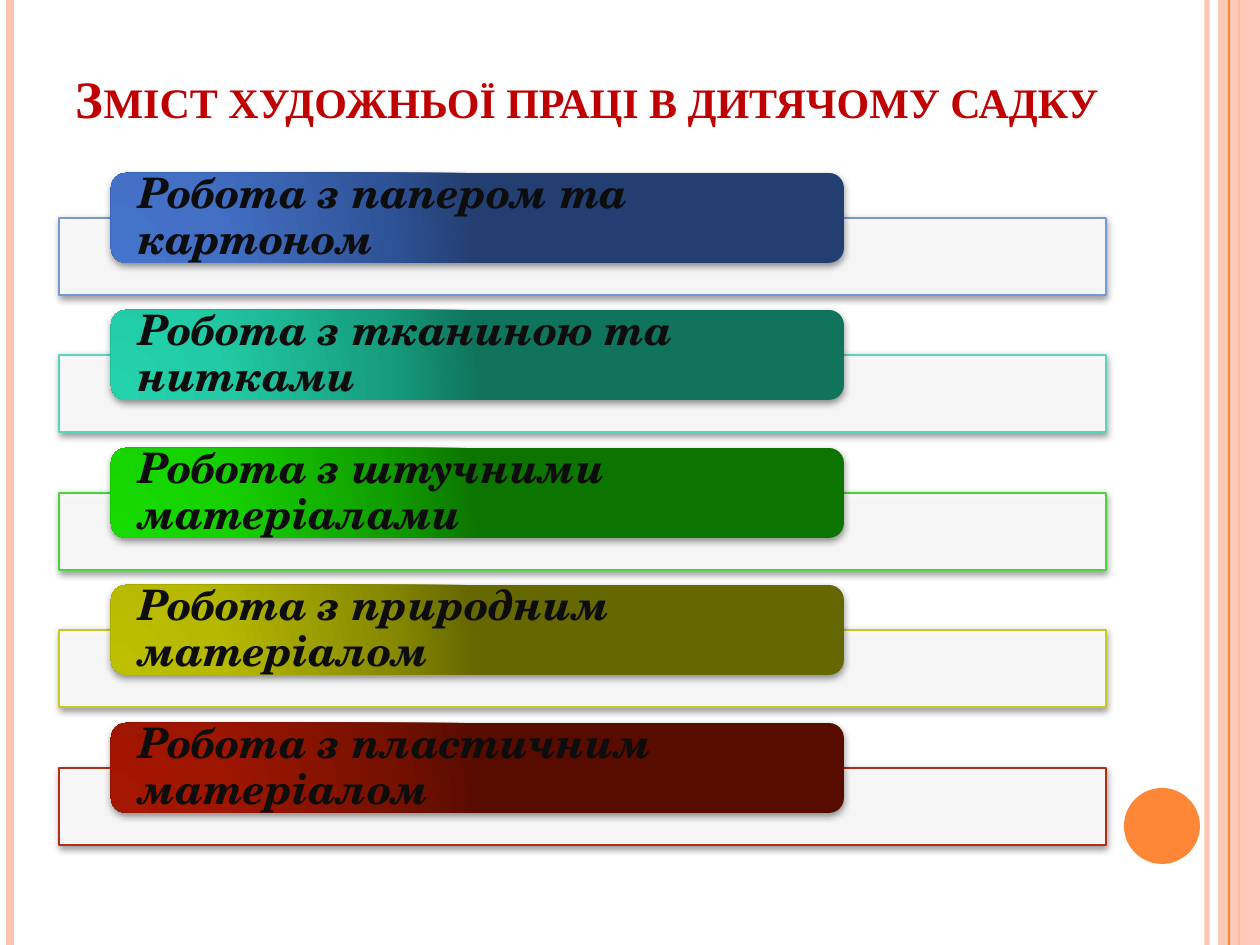
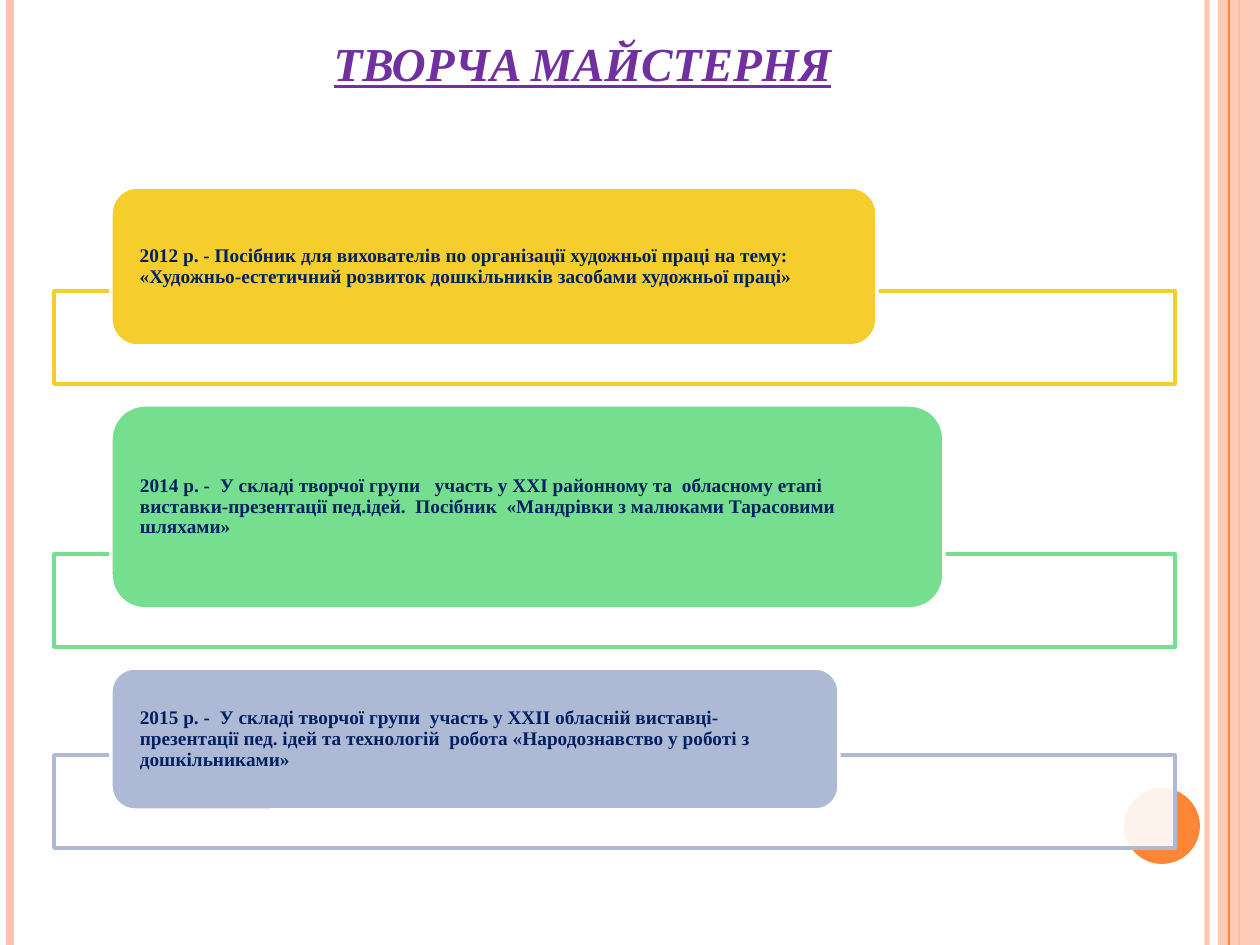
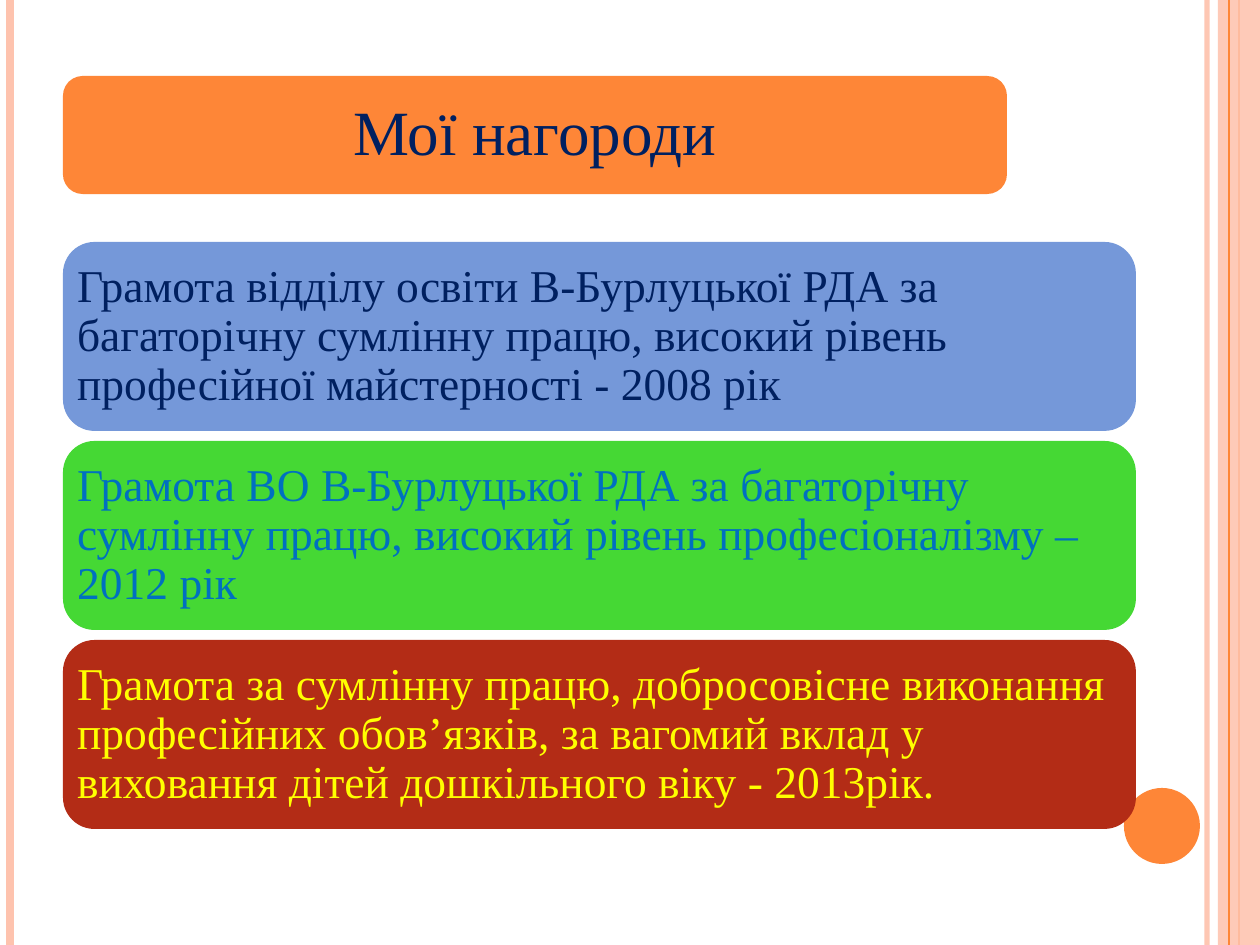
import lxml.etree
import pptx
import pptx.dml.color
import pptx.enum.shapes
import pptx.enum.text
import pptx.oxml
import pptx.oxml.ns
import pptx.util

PX = 914400 / 126  # EMU per px
FONT = "Times New Roman"
ORANGE, PEACH, WHITE, NAVY = "FE8637", "FEC3AE", "FFFFFF", "002060"
rgb = pptx.dml.color.RGBColor.from_string
qn = pptx.oxml.ns.qn
SHAPE = pptx.enum.shapes.MSO_SHAPE
ANCHOR = pptx.enum.text.MSO_ANCHOR
ALIGN = pptx.enum.text.PP_ALIGN


def add_box(slide, kind, box, fill, line=None, width=0, alpha=100):
    """Add a preset shape; box is left, top, width, height in px."""
    sp = slide.shapes.add_shape(kind, *[round(v * PX) for v in box])
    sp.shadow.inherit = False
    sp.fill.solid()
    sp.fill.fore_color.rgb = rgb(fill)
    if alpha < 100:
        clr = sp.element.spPr.find(qn("a:solidFill"))[0]
        lxml.etree.SubElement(clr, qn("a:alpha"), val=str(alpha * 1000))
    if line:
        sp.line.color.rgb = rgb(line)
        sp.line.width = pptx.util.Pt(width)
    else:
        sp.line.fill.background()
    return sp


def write(sp, text, size, color, inset=(13, 6), font=FONT, bold=False,
          italic=False, align=ALIGN.LEFT, anchor=ANCHOR.MIDDLE, spacing=0.9):
    """Set the text of a shape; inset is the side and top margin in px."""
    tf = sp.text_frame
    tf.word_wrap = True
    tf.vertical_anchor = anchor
    tf.margin_left = tf.margin_right = round(inset[0] * PX)
    tf.margin_top = tf.margin_bottom = round(inset[1] * PX)
    p = tf.paragraphs[0]
    p.text = text
    p.alignment = align
    p.line_spacing = spacing
    r = p.runs[0]
    r.font.name = font
    r.font.size = pptx.util.Pt(size)
    r.font.color.rgb = rgb(color)
    r.font.bold = bold
    r.font.italic = italic
    return r


prs = pptx.Presentation()
prs.slide_width = round(1260 * PX)
prs.slide_height = round(945 * PX)
blank = prs.slide_layouts[6]
work, workshop, awards = [prs.slides.add_slide(blank) for _ in range(3)]

# Shared side stripes and disc, drawn once and moved to the layout
decor = []
for x, color, width, alpha in [(1207, PEACH, 3, 93), (10, PEACH, 4.5, 100),
                               (1239, ORANGE, 1.5, 100), (None, PEACH, 0, 87),
                               (1229, ORANGE, 0.75, 100)]:
    if x is None:
        band = add_box(work, SHAPE.RECTANGLE, (1218, 0, 42, 945), color, alpha=alpha)
        decor.append(band)
        continue
    cx = work.shapes.add_connector(pptx.enum.shapes.MSO_CONNECTOR.STRAIGHT,
                                   round(x * PX), 0, round(x * PX), prs.slide_height)
    cx.line.color.rgb = rgb(color)
    cx.line.width = pptx.util.Pt(width)
    if alpha < 100:
        clr = cx.element.spPr.find(qn("a:ln")).find(qn("a:solidFill"))[0]
        lxml.etree.SubElement(clr, qn("a:alpha"), val=str(alpha * 1000))
    lxml.etree.SubElement(cx.element.spPr, qn("a:effectLst"))
    decor.append(cx)
decor.append(add_box(work, SHAPE.OVAL, (1124, 788, 76, 76), ORANGE))
for sp in decor:
    blank.shapes.element.append(sp.element)

# Titles of the first two slides
for slide, box, text, size, color, align in [
        (work, (63, 38, 1133, 97), "Зміст художньої праці в дитячому садку",
         30, "C00000", ALIGN.LEFT),
        (workshop, (123, 37, 919, 60), "ТВОРЧА МАЙСТЕРНЯ", 27, "7030A0", ALIGN.CENTER)]:
    sp = slide.shapes.add_textbox(*[round(v * PX) for v in box])
    r = write(sp, text, size, color, bold=True, italic=slide is workshop,
              align=align, anchor=ANCHOR.BOTTOM, spacing=1.0)
    r.font.underline = slide is workshop
    r.font._element.set("cap", "small")

# Slide 1: kinds of work, a gradient label over a shadowed bar
SHADOW = pptx.oxml.parse_xml
NS = 'xmlns:a="http://schemas.openxmlformats.org/drawingml/2006/main"'
shadow_xml = (f'<a:outerShdw {NS} blurRad="50800" dist="20320" dir="5400000" '
              'rotWithShape="0"><a:srgbClr val="000000"><a:alpha val="42000"/>'
              '</a:srgbClr></a:outerShdw>')
kinds = [
    ("папером та картоном", "7598D9", ("4574CC", "4370C5", "2F5397", "233E70")),
    ("тканиною та нитками", "55D7BA", ("23D3AB", "22CBA5", "169D7E", "10745D")),
    ("штучними матеріалами", "45D834", ("17DB00", "16D300", "119E00", "0C7500")),
    ("природним матеріалом", "C7CA20", ("BCC000", "B6B900", "888B00", "656700")),
    ("пластичним матеріалом", "B32C16", ("A41700", "9F1600", "771100", "580C00")),
]
for i, (material, line, shades) in enumerate(kinds):
    top = 173 + i * 275 // 2
    bar = add_box(work, SHAPE.RECTANGLE, (59, top + 45, 1047, 77), WHITE, line, 1, 90)
    label = add_box(work, SHAPE.ROUNDED_RECTANGLE, (111, top, 733, 90), shades[0])
    stops = "".join(f'<a:gs pos="{pos}000"><a:srgbClr val="{c}"/></a:gs>'
                    for pos, c in zip((0, 30, 75, 100), shades))
    grad = pptx.oxml.parse_xml(
        f'<a:gradFill {NS} rotWithShape="1"><a:gsLst>{stops}</a:gsLst><a:path path="circle">'
        '<a:fillToRect l="5000" t="100000" r="120000" b="10000"/></a:path></a:gradFill>')
    spPr = label.element.spPr
    spPr.replace(spPr.find(qn("a:solidFill")), grad)
    for sp in (bar, label):
        sp.element.spPr.find(qn("a:effectLst")).append(pptx.oxml.parse_xml(shadow_xml))
    write(label, "Робота з " + material, 24, "0D0D0D", (23, 0),
          "TeX Gyre Schola", bold=True, italic=True)

# Slide 2: years, each label overlapping its bar by 55 px
years = [
    (766, 159, "F5CD2D", "2012 р. - Посібник для вихователів по організації художньої "
     "праці на тему: «Художньо-естетичний розвиток дошкільників засобами художньої праці»"),
    (833, 204, "75DE8F", "2014 р. -  У складі творчої групи   участь у XXI районному та  "
     "обласному етапі  виставки-презентації пед.ідей.  Посібник  «Мандрівки з малюками "
     "Тарасовими шляхами»"),
    (728, 142, "AEBAD5", "2015 р. -  У складі творчої групи  участь у ХХІІ обласній "
     "виставці-презентації пед. ідей та технологій  робота «Народознавство у роботі з "
     "дошкільниками»"),
]
top = 187
for width, height, color, text in years:
    bar_top = top + height - 55
    add_box(workshop, SHAPE.RECTANGLE, (54, bar_top, 1121, 93), WHITE, color, 2, 90)
    label = add_box(workshop, SHAPE.ROUNDED_RECTANGLE, (111, top, width, height),
                    color, WHITE, 2)
    corner = round(height * 0.05)  # text inset made by the rounded corner
    write(label, text, 11, NAVY, (29 - corner, 0), bold=True)
    top = bar_top + 93 + 21

# Slide 3: heading and awards
heading = add_box(awards, SHAPE.ROUNDED_RECTANGLE, (63, 76, 944, 118), ORANGE)
write(heading, "Мої нагороди", 36, NAVY, (13, 13), align=ALIGN.CENTER)
diplomas = [
    ("7598D9", NAVY, "Грамота відділу освіти В-Бурлуцької РДА за багаторічну сумлінну "
     "працю, високий рівень професійної майстерності - 2008 рік"),
    ("45D834", "0070C0", "Грамота ВО В-Бурлуцької РДА за багаторічну сумлінну працю, "
     "високий рівень професіоналізму – 2012 рік"),
    ("B32C16", "FFFF00", "Грамота за сумлінну працю, добросовісне виконання професійних "
     "обов’язків, за вагомий вклад у виховання дітей дошкільного віку - 2013рік."),
]
for i, (fill, color, text) in enumerate(diplomas):
    sp = add_box(awards, SHAPE.ROUNDED_RECTANGLE, (63, 242 + 199 * i, 1073, 189), fill)
    write(sp, text, 26, color, (5, 5))

prs.save("out.pptx")
